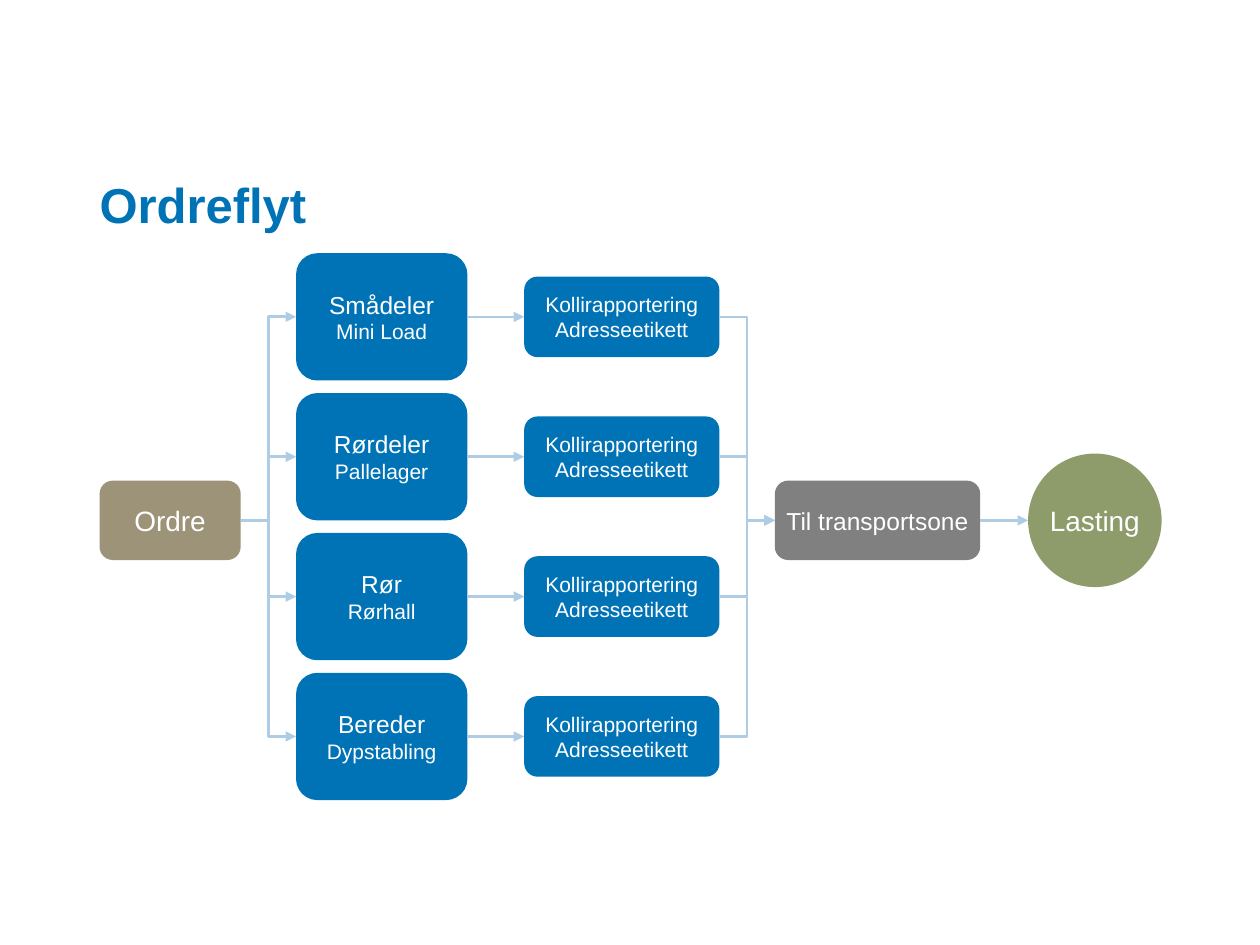
from dataclasses import dataclass

from lxml import etree
from pptx import Presentation
from pptx import util as u
from pptx.dml.color import RGBColor
from pptx.enum import shapes, text
from pptx.oxml.ns import qn

Inches = u.Inches
KIND = shapes.MSO_SHAPE
LINK = shapes.MSO_CONNECTOR
LEFT, RIGHT = 1, 3  # connection sites of a rounded box


@dataclass(frozen=True)
class Theme:
    font: str = "Arial"
    blue: str = "0073B6"
    tan: str = "9D9379"
    gray: str = "808080"
    green: str = "8E9C6C"
    pale: str = "AECDE5"
    white: str = "FFFFFF"
    title: int = 28
    large: int = 16
    mid: int = 14
    small: int = 12
    line: float = 1.5


THEME = Theme()
STORES = [
    ("Smådeler", "Mini Load"),
    ("Rørdeler", "Pallelager"),
    ("Rør", "Rørhall"),
    ("Bereder", "Dypstabling"),
]
REPORT = "Kollirapportering\vAdresseetikett"


def write(para, words, size, color=THEME.white, bold=False,
          align=text.PP_ALIGN.CENTER):
    para.text = words
    para.alignment = align
    font = para.font
    font.name, font.size, font.bold = THEME.font, u.Pt(size), bold
    font.color.rgb = RGBColor.from_string(color)


def add_node(slide, box, lines, fill, kind=KIND.ROUNDED_RECTANGLE):
    """Add a filled shape; lines holds (words, size) for each paragraph."""
    node = slide.shapes.add_shape(kind, *map(Inches, box))
    node.shadow.inherit = False
    node.fill.solid()
    node.fill.fore_color.rgb = RGBColor.from_string(fill)
    node.line.fill.background()
    frame = node.text_frame
    frame.word_wrap = False
    frame.vertical_anchor = text.MSO_ANCHOR.MIDDLE
    for i, (words, size) in enumerate(lines):
        para = frame.add_paragraph() if i else frame.paragraphs[0]
        write(para, words, size)
    return node


def add_arrow(slide, start, end, kind=LINK.STRAIGHT):
    """Link the right side of start to the left side of end."""
    mid = end.top + end.height // 2
    arrow = slide.shapes.add_connector(kind, 0, 0, end.left, mid)
    arrow.begin_connect(start, RIGHT)
    if end.auto_shape_type == KIND.ROUNDED_RECTANGLE:
        arrow.end_connect(end, LEFT)
    arrow.line.color.rgb = RGBColor.from_string(THEME.pale)
    arrow.line.width = u.Pt(THEME.line)
    etree.SubElement(arrow.line._get_or_add_ln(), qn("a:tailEnd"), type="triangle")
    etree.SubElement(arrow._element.spPr, qn("a:effectLst"))


def set_title(slide, box, words):
    title = slide.shapes.title
    title.left, title.top, title.width, title.height = map(Inches, box)
    frame = title.text_frame
    frame.auto_size = text.MSO_AUTO_SIZE.NONE
    frame.word_wrap = True
    frame.vertical_anchor = text.MSO_ANCHOR.BOTTOM
    frame.margin_left = frame.margin_top = frame.margin_right = 0
    frame.margin_bottom = Inches(0.16)
    write(frame.paragraphs[0], words, THEME.title, THEME.blue, True,
          text.PP_ALIGN.LEFT)


def add_flow(slide, box):
    left, top, width, height = box
    store_w, store_h = 1.36, 1.01
    label_w, label_h = 1.55, 0.64
    step_h, disc = 0.63, 1.06
    pitch = (height - store_h) / (len(STORES) - 1)
    axis = top + 2.12

    def step(x, wide, words, size, fill):
        return add_node(slide, (x, axis - step_h / 2, wide, step_h),
                        [(words, size)], fill)

    order = step(left, 1.12, "Ordre", THEME.large, THEME.tan)
    zone = step(left + 5.36, 1.63, "Til transportsone", THEME.mid, THEME.gray)
    load = add_node(slide, (left + width - disc, axis - disc / 2, disc, disc),
                    [("Lasting", THEME.large)], THEME.green, KIND.OVAL)

    for row, (name, place) in enumerate(STORES):
        y = top + row * pitch
        store = add_node(slide, (left + 1.56, y, store_w, store_h),
                         [(name, THEME.mid), (place, THEME.small)], THEME.blue)
        label = add_node(
            slide,
            (left + 3.37, y + (store_h - label_h) / 2, label_w, label_h),
            [(REPORT, THEME.small)], THEME.blue)
        add_arrow(slide, order, store, LINK.ELBOW)
        add_arrow(slide, store, label)
        add_arrow(slide, label, zone, LINK.ELBOW)
    add_arrow(slide, zone, load)


def main():
    deck = Presentation()
    deck.slide_width, deck.slide_height = Inches(10), Inches(7.5)
    slide = deck.slides.add_slide(deck.slide_layouts[5])
    set_title(slide, (0.79, 1.39, 8.43, 0.62), "Ordreflyt")
    add_flow(slide, (0.79, 2.01, 8.43, 4.34))
    deck.save("out.pptx")


if __name__ == "__main__":
    main()
